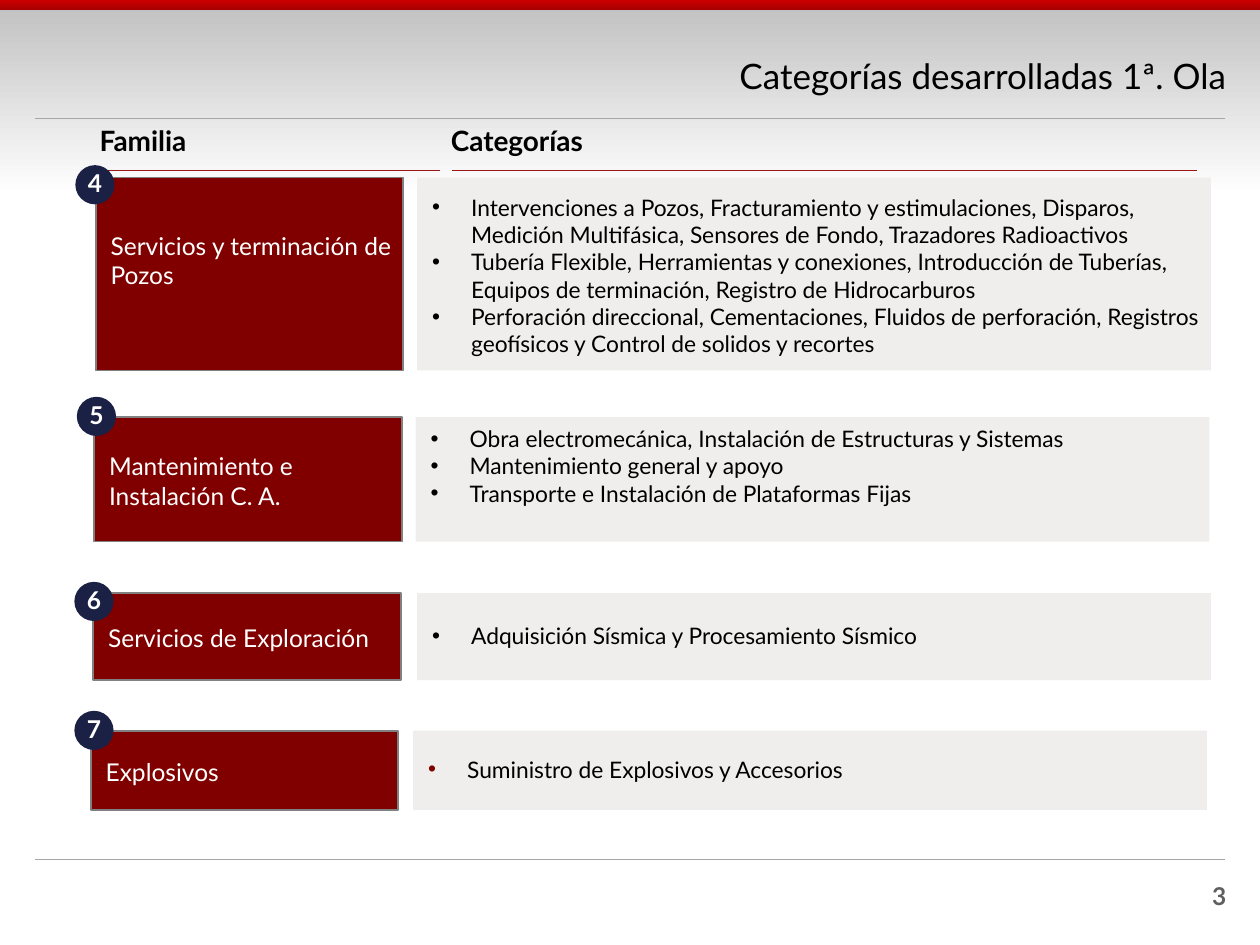
from lxml import etree
from pptx import Presentation
from pptx.dml.color import RGBColor
from pptx.enum.shapes import MSO_CONNECTOR, MSO_SHAPE
from pptx.enum.text import MSO_ANCHOR, PP_ALIGN
from pptx.oxml.ns import qn
from pptx.util import Cm, Pt

RECT, OVAL = MSO_SHAPE.RECTANGLE, MSO_SHAPE.OVAL
STRAIGHT = MSO_CONNECTOR.STRAIGHT
TOP, MIDDLE = MSO_ANCHOR.TOP, MSO_ANCHOR.MIDDLE
LEFT, CENTER, RIGHT, JUSTIFY = PP_ALIGN.LEFT, PP_ALIGN.CENTER, PP_ALIGN.RIGHT, PP_ALIGN.JUSTIFY

BLACK = RGBColor(0, 0, 0)
WHITE = RGBColor(255, 255, 255)
SILVER = RGBColor(0xC0, 0xC0, 0xC0)
RED = RGBColor(0xCC, 0, 0)
DARK_RED = RGBColor(0xA8, 0, 0)
MAROON = RGBColor(0x80, 0, 0)
RULE_RED = RGBColor(0x9B, 0x17, 0x17)
RULE_GRAY = RGBColor(0xA6, 0xA6, 0xA6)
BORDER = RGBColor(0x80, 0x80, 0x80)
PANEL = RGBColor(0xEF, 0xEE, 0xEC)
NAVY = RGBColor(0x1B, 0x20, 0x45)
NUMBER_GRAY = RGBColor(0x5F, 0x5F, 0x5F)


def write(sp, *lines, size=14, color=BLACK, bold=False, align=LEFT, anchor=MIDDLE,
          insets=(0, 0, 0, 0), spacing=None, bullet=None, wrap=True):
    tf = sp.text_frame
    tf.word_wrap = wrap
    tf.vertical_anchor = anchor
    tf.margin_left, tf.margin_top, tf.margin_right, tf.margin_bottom = map(Cm, insets)
    for i, line in enumerate(lines):
        p = tf.add_paragraph() if i else tf.paragraphs[0]
        p.alignment = align
        if spacing:
            p.line_spacing = spacing
        if bullet is not None:
            pPr = p._p.get_or_add_pPr()
            pPr.set("marL", str(Cm(0.79)))
            pPr.set("indent", str(-Cm(0.79)))
            clr = etree.SubElement(pPr, qn("a:buClr"))
            etree.SubElement(clr, qn("a:srgbClr"), val=str(bullet))
            etree.SubElement(pPr, qn("a:buFont"), typeface="Arial")
            etree.SubElement(pPr, qn("a:buChar"), char="•")
        r = p.add_run()
        r.text = line
        r.font.name = "Lato"
        r.font.size = Pt(size)
        r.font.bold = bold
        r.font.color.rgb = color


def add_block(kind, left, top, width, height, fill, fade=None, border=None):
    sp = s.shapes.add_shape(kind, Cm(left), Cm(top), Cm(width), Cm(height))
    sp.shadow.inherit = False
    if fade:
        sp.fill.gradient()
        sp.fill.gradient_angle = 270
        for stop, position, color in zip(sp.fill.gradient_stops, (0, 1), (fill, fade)):
            stop.position = position
            stop.color.rgb = color
    else:
        sp.fill.solid()
        sp.fill.fore_color.rgb = fill
    if border:
        sp.line.color.rgb = border
        sp.line.width = Pt(1)
    else:
        sp.line.fill.background()
    return sp


prs = Presentation()
prs.slide_width, prs.slide_height = Cm(25.4), Cm(19.05)
s = prs.slides.add_slide(prs.slide_layouts[6])

add_block(RECT, 0, 0, 25.4, 3.94, SILVER, fade=WHITE)
add_block(RECT, 0, 0, 25.4, 0.2, RED, fade=DARK_RED)

rules = [
    (0.71, 24.69, 17.32, RULE_GRAY),
    (0.71, 24.69, 2.39, RULE_GRAY),
    (9.12, 24.13, 3.43, RULE_RED),
    (1.96, 8.86, 3.43, RULE_RED),
]
for x1, x2, y, color in rules:
    cx = s.shapes.add_connector(STRAIGHT, Cm(x1), Cm(y), Cm(x2), Cm(y))
    cx.line.color.rgb = color
    cx.line.width = Pt(0.75)
    etree.SubElement(cx._element.spPr, qn("a:effectLst"))

heading = dict(size=16, bold=True, anchor=TOP, spacing=0.9)
texts = [
    ("3", 18.8, 17.63, 5.92, 0.81,
     dict(color=NUMBER_GRAY, bold=True, align=RIGHT, anchor=TOP, insets=(0.25, 0.13, 0, 0.13))),
    ("Categorías desarrolladas 1ª. Ola", 5.21, 0.86, 19.51, 1.45,
     dict(size=20, align=RIGHT, spacing=0.9)),
    ("Familia", 2.01, 2.57, 6.1, 0.61, heading),
    ("Categorías", 9.09, 2.57, 13.41, 0.61, heading),
]
for text, left, top, width, height, style in texts:
    write(s.shapes.add_textbox(Cm(left), Cm(top), Cm(width), Cm(height)), text, **style)

PADDING = (0.3, 0.2, 0.2, 0.15)
RAISED = (0.3, 0.2, 0.2, 0.75)
SHALLOW = (0.3, 0.1, 0.2, 0.15)
families = [
    ("4", "Servicios y terminación de Pozos", 3.58, 3.89, 1.93, 8.41, (1.52, 3.33), RAISED,
     ["Intervenciones a Pozos, Fracturamiento y estimulaciones, Disparos, "
      "Medición Multifásica, Sensores de Fondo, Trazadores Radioactivos",
      "Tubería Flexible, Herramientas y conexiones, Introducción de Tuberías, "
      "Equipos de terminación, Registro de Hidrocarburos",
      "Perforación direccional, Cementaciones, Fluidos de perforación, "
      "Registros geofísicos y Control de solidos y recortes"],
     dict(insets=PADDING, bullet=BLACK)),
    ("5", "Mantenimiento e Instalación C. A.", 8.41, 2.51, 1.9, 8.38, (1.55, 8.0), PADDING,
     ["Obra electromecánica, Instalación de Estructuras y Sistemas",
      "Mantenimiento general y apoyo",
      "Transporte e Instalación de Plataformas Fijas"],
     dict(insets=RAISED, bullet=BLACK, align=JUSTIFY)),
    ("6", "Servicios de Exploración", 11.96, 1.75, 1.88, 8.41, (1.5, 11.73), PADDING,
     ["Adquisición Sísmica y Procesamiento Sísmico"],
     dict(insets=SHALLOW, bullet=BLACK)),
    ("7", "Explosivos", 14.73, 1.6, 1.83, 8.33, (1.5, 14.33), PADDING,
     ["Suministro de Explosivos y Accesorios"],
     dict(insets=SHALLOW, bullet=MAROON)),
]
for number, family, top, height, family_x, list_x, badge, insets, categories, style in families:
    sp = add_block(RECT, list_x, top, 16, height, PANEL)
    write(sp, *categories, size=13, **style)
    sp = add_block(RECT, family_x, top, 6.2, height, MAROON, border=BORDER)
    write(sp, family, color=WHITE, insets=insets)
    sp = add_block(OVAL, *badge, 0.79, 0.79, NAVY)
    write(sp, number, color=WHITE, bold=True, align=CENTER, spacing=0.9, wrap=False)

prs.save("out.pptx")
